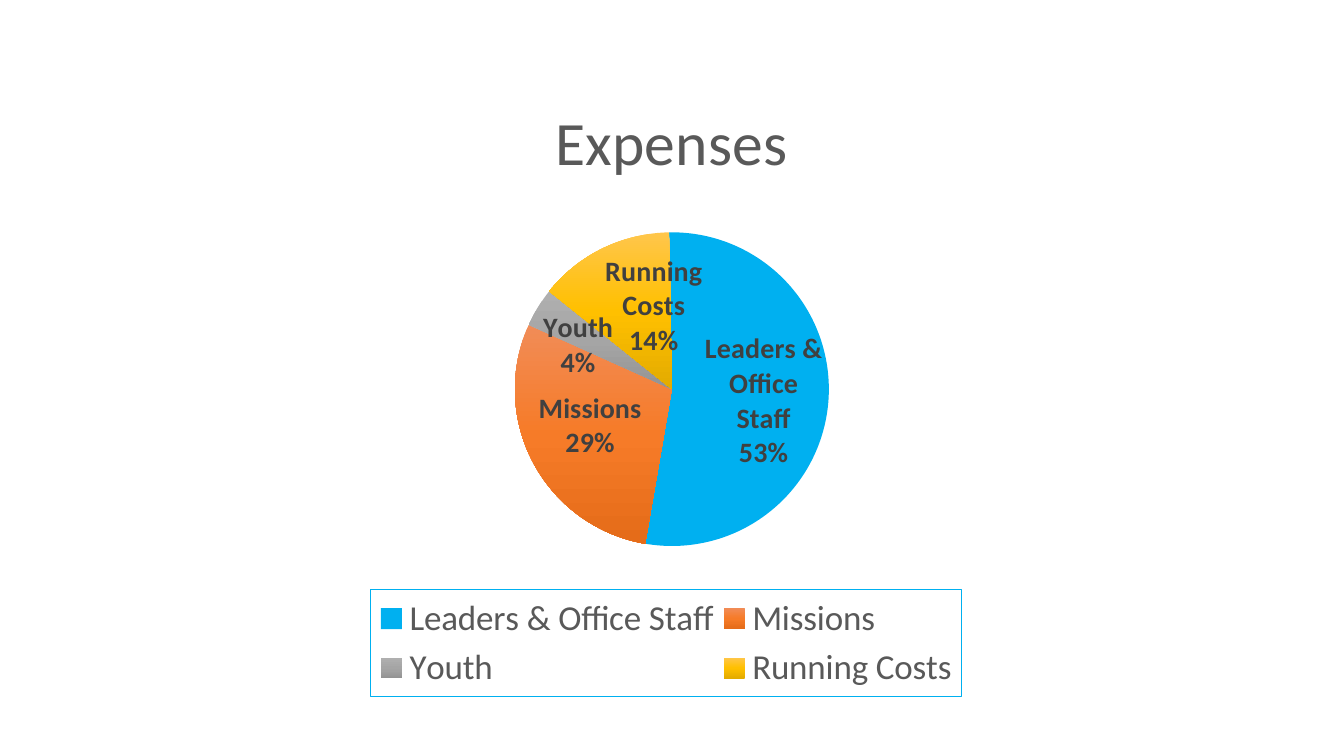
from copy import deepcopy

from pptx import Presentation
from pptx.chart.data import CategoryChartData
from pptx.dml.color import RGBColor
from pptx.enum.chart import XL_CHART_TYPE, XL_LABEL_POSITION, XL_LEGEND_POSITION
from pptx.oxml import parse_xml
from pptx.oxml.ns import nsdecls
from pptx.util import Pt

PX = 9525  # one pixel at 96 to the inch, in EMU
FONT = "Calibri"
TEXT_GREY = "595959"
LABEL_GREY = "404040"
LEGEND_BLUE = "00B0F0"

# Category, percentage, fill colours from top to bottom
EXPENSES = [
    ("Leaders & Office Staff", 53, ["00B0F0"]),
    ("Missions", 29, ["F18C57", "F67B28", "E56C19"]),
    ("Youth", 4, ["AFAFAF", "A5A5A5", "939393"]),
    ("Running Costs", 14, ["FFC64B", "FFC000", "E3AB00"]),
]


def color(hex_string):
    return RGBColor.from_string(hex_string)


def style_font(font, size, hex_string, bold=False):
    font.name = FONT
    font.size = Pt(size)
    font.bold = bold
    font.color.rgb = color(hex_string)


def fill_slice(fill, colors):
    """Fill with one colour, or with a vertical gradient of three."""
    if len(colors) == 1:
        fill.solid()
        fill.fore_color.rgb = color(colors[0])
        return
    fill.gradient()
    fill.gradient_angle = 270
    first_stop = fill.gradient_stops[0]._gs
    first_stop.addnext(deepcopy(first_stop))
    for stop, position, hex_string in zip(fill.gradient_stops, (0, 0.5, 1), colors):
        stop.position = position
        stop.color.rgb = color(hex_string)


def set_layout(next_element, target="", **fractions):
    """Place a chart part by fractions of the chart's size."""
    for old_layout in next_element.getparent().findall("{*}layout"):
        old_layout.getparent().remove(old_layout)
    inner = f'<c:layoutTarget val="{target}"/>' if target else ""
    inner += '<c:xMode val="edge"/><c:yMode val="edge"/>'
    inner += "".join(f'<c:{key} val="{value}"/>' for key, value in fractions.items())
    next_element.addprevious(parse_xml(
        f'<c:layout {nsdecls("c")}><c:manualLayout>{inner}</c:manualLayout></c:layout>'))


def add_title(chart, text):
    chart.has_title = True
    paragraph = chart.chart_title.text_frame.paragraphs[0]
    run = paragraph.add_run()
    run.text = text
    style_font(run.font, 44, TEXT_GREY)
    overlay = chart.element.xpath(".//c:title/c:overlay")[0]
    set_layout(overlay, x=0.39, y=0.03)


def add_legend(chart):
    chart.has_legend = True
    legend = chart.legend
    legend.position = XL_LEGEND_POSITION.BOTTOM
    legend.include_in_layout = False
    style_font(legend.font, 25, TEXT_GREY)
    overlay = chart.element.xpath(".//c:legend/c:overlay")[0]
    # Just too narrow for three columns, so the entries fall into two
    set_layout(overlay, x=0.24, y=0.83, w=0.51, h=0.17)
    overlay.addnext(parse_xml(
        f'<c:spPr {nsdecls("c", "a")}><a:noFill/><a:ln w="9525"><a:solidFill>'
        f'<a:srgbClr val="{LEGEND_BLUE}"/></a:solidFill></a:ln></c:spPr>'))


def add_labels(plot):
    plot.has_data_labels = True
    labels = plot.data_labels
    labels.show_category_name = True
    labels.show_percentage = True
    labels.show_value = False
    labels.position = XL_LABEL_POSITION.INSIDE_END
    style_font(labels.font, 20, LABEL_GREY, bold=True)


def turn_pie(pie, degrees):
    """Set the angle at which the first slice starts."""
    for old_angle in pie.findall("{*}firstSliceAng"):
        pie.remove(old_angle)
    pie.append(parse_xml(f'<c:firstSliceAng {nsdecls("c")} val="{degrees}"/>'))


def add_pie(slide, left, top, width, height):
    data = CategoryChartData()
    data.categories = [name for name, _, _ in EXPENSES]
    data.add_series("Series 1", [share for _, share, _ in EXPENSES])
    chart = slide.shapes.add_chart(
        XL_CHART_TYPE.PIE, left * PX, top * PX, width * PX, height * PX, data).chart
    style_font(chart.font, 10, "000000")
    plot = chart.plots[0]
    plot.vary_by_categories = True
    for index, (_, _, colors) in enumerate(EXPENSES):
        slice_format = plot.series[0].points[index].format
        fill_slice(slice_format.fill, colors)
        slice_format.line.fill.background()
    add_labels(plot)
    pie = chart.element.xpath(".//c:pieChart")[0]
    set_layout(pie, "inner", x=0.36, y=0.26, w=0.28, h=0.5)
    # One degree back centres the largest slice's label on its side
    turn_pie(pie, 359)
    return chart


def main():
    presentation = Presentation()
    presentation.slide_width = 1280 * PX
    presentation.slide_height = 720 * PX
    slide = presentation.slides.add_slide(presentation.slide_layouts[6])

    # Pie of expenses with its title and legend
    chart = add_pie(slide, 88, 66, 1104, 598)
    add_title(chart, "Expenses")
    add_legend(chart)

    presentation.save("out.pptx")


if __name__ == "__main__":
    main()
